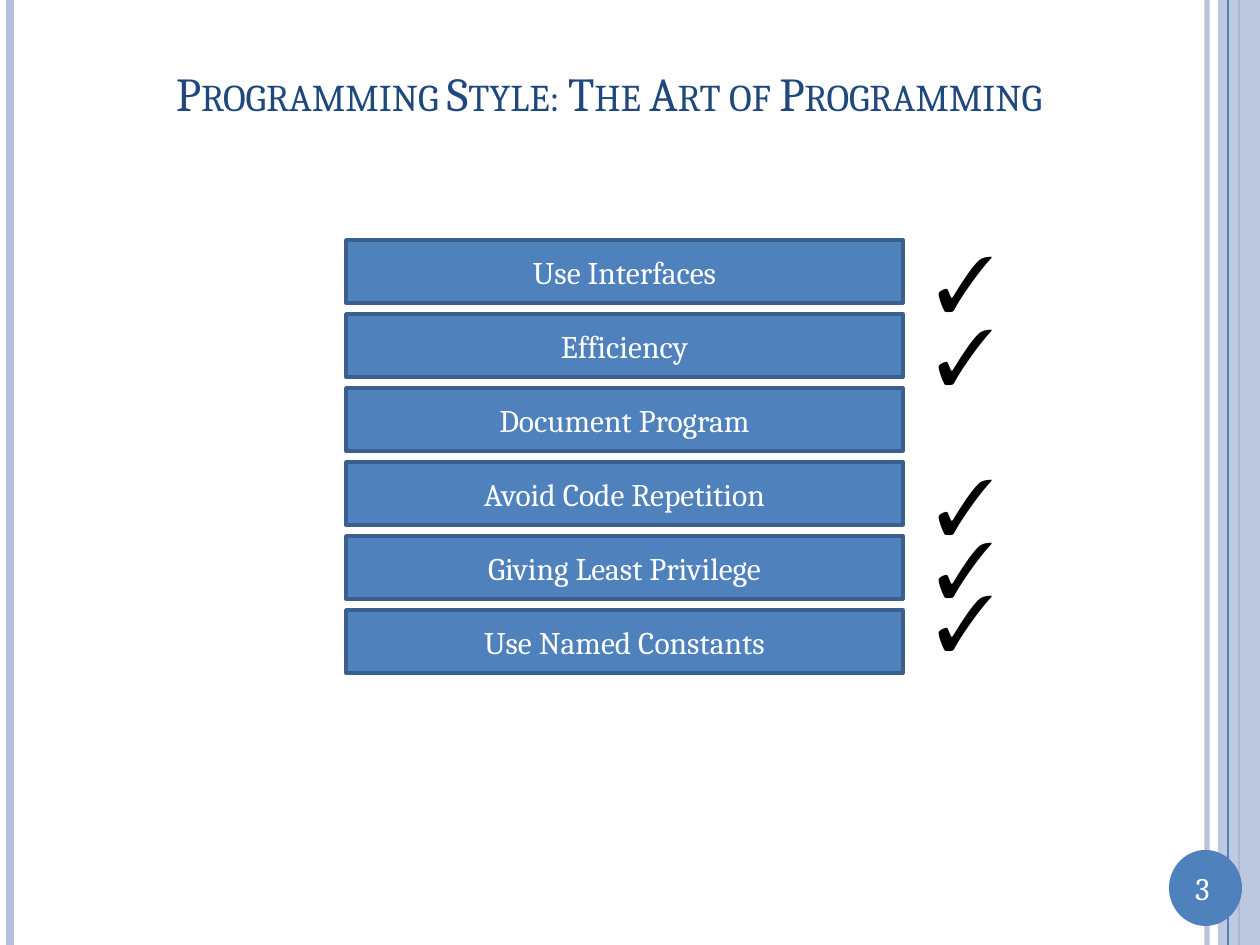
from lxml import etree
from pptx import Presentation
from pptx.dml.color import RGBColor
from pptx.enum.shapes import MSO_CONNECTOR, MSO_SHAPE
from pptx.enum.text import MSO_ANCHOR, PP_ALIGN
from pptx.oxml.ns import qn
from pptx.util import Pt

RECT, OVAL = MSO_SHAPE.RECTANGLE, MSO_SHAPE.OVAL
STRAIGHT = MSO_CONNECTOR.STRAIGHT
LEFT, CENTER = PP_ALIGN.LEFT, PP_ALIGN.CENTER
TOP, MIDDLE = MSO_ANCHOR.TOP, MSO_ANCHOR.MIDDLE

WHITE = RGBColor(0xFF, 0xFF, 0xFF)
BLACK = RGBColor(0, 0, 0)
NAVY = RGBColor(0x1F, 0x49, 0x7D)
BLUE = RGBColor(0x4F, 0x81, 0xBD)
EDGE = RGBColor(0x3A, 0x5F, 0x8C)
PALE = RGBColor(0xB3, 0xC1, 0xDB)

WIDTH, HEIGHT = 1260, 945
BOX_TOP, BOX_PITCH = 240, 74
PRINCIPLES = [
    "Use Interfaces",
    "Efficiency",
    "Document Program",
    "Avoid Code Repetition",
    "Giving Least Privilege",
    "Use Named Constants",
]
CHECK_TOPS = [228, 301, 451, 514, 567]


def px(n):
    return round(n * 914400 / 126)


class SlideBuilder:
    font = "Cambria"

    def __init__(self, slide):
        self.s = slide

    def set_alpha(self, fill, percent):
        color = fill._xPr.find(qn("a:solidFill"))[0]
        etree.SubElement(color, qn("a:alpha")).set("val", str(percent * 1000))

    def rule(self, x, color, width, alpha=100):
        line = self.s.shapes.add_connector(STRAIGHT, px(x), 0, px(x), px(HEIGHT))
        line.line.color.rgb = color
        line.line.width = Pt(width)
        if alpha < 100:
            self.set_alpha(line.line.fill, alpha)
        etree.SubElement(line._element.spPr, qn("a:effectLst"))

    def shape(self, kind, x, y, w, h, color, edge=None, alpha=100):
        sp = self.s.shapes.add_shape(kind, px(x), px(y), px(w), px(h))
        sp.shadow.inherit = False
        sp.fill.solid()
        sp.fill.fore_color.rgb = color
        if alpha < 100:
            self.set_alpha(sp.fill, alpha)
        if edge is None:
            sp.line.fill.background()
        else:
            sp.line.color.rgb = edge
            sp.line.width = Pt(2)
        return sp

    def set_text(self, sp, text, size, color, align=CENTER, anchor=MIDDLE):
        tf = sp.text_frame
        tf.word_wrap = True
        tf.vertical_anchor = anchor
        p = tf.paragraphs[0]
        p.text = text
        p.alignment = align
        p.font.name = self.font
        p.font.size = Pt(size)
        p.font.color.rgb = color
        return p

    def text(self, x, y, w, h, text, size, color, align=CENTER, anchor=TOP):
        sp = self.s.shapes.add_textbox(px(x), px(y), px(w), px(h))
        return self.set_text(sp, text, size, color, align, anchor)

    def title(self, text):
        p = self.text(63, 38, 1092, 110, text, 27, NAVY, anchor=MIDDLE)
        p.runs[0].font._element.set("cap", "small")

    def box(self, y, text):
        sp = self.shape(RECT, 346, y, 557, 63, BLUE, EDGE)
        self.set_text(sp, text, 18, WHITE)

    def check(self, y):
        self.text(924, y, 63, 106, "✓", 44, BLACK, LEFT)


def main():
    prs = Presentation()
    prs.slide_width, prs.slide_height = px(WIDTH), px(HEIGHT)
    s = SlideBuilder(prs.slides.add_slide(prs.slide_layouts[6]))

    s.rule(1207, PALE, 3, alpha=93)
    s.rule(10, PALE, 4.5)
    s.rule(1239, BLUE, 1.5)
    s.shape(RECT, 1218, 0, 42, HEIGHT, PALE, alpha=87)
    s.rule(1228, BLUE, 0.75)
    s.shape(OVAL, 1169, 850, 73, 76, BLUE)
    s.text(1166, 863, 73, 50, "3", 18, WHITE)

    s.title("Programming Style: The Art of Programming")
    for i, principle in enumerate(PRINCIPLES):
        s.box(BOX_TOP + i * BOX_PITCH, principle)
    for y in CHECK_TOPS:
        s.check(y)

    prs.save("out.pptx")


if __name__ == "__main__":
    main()
